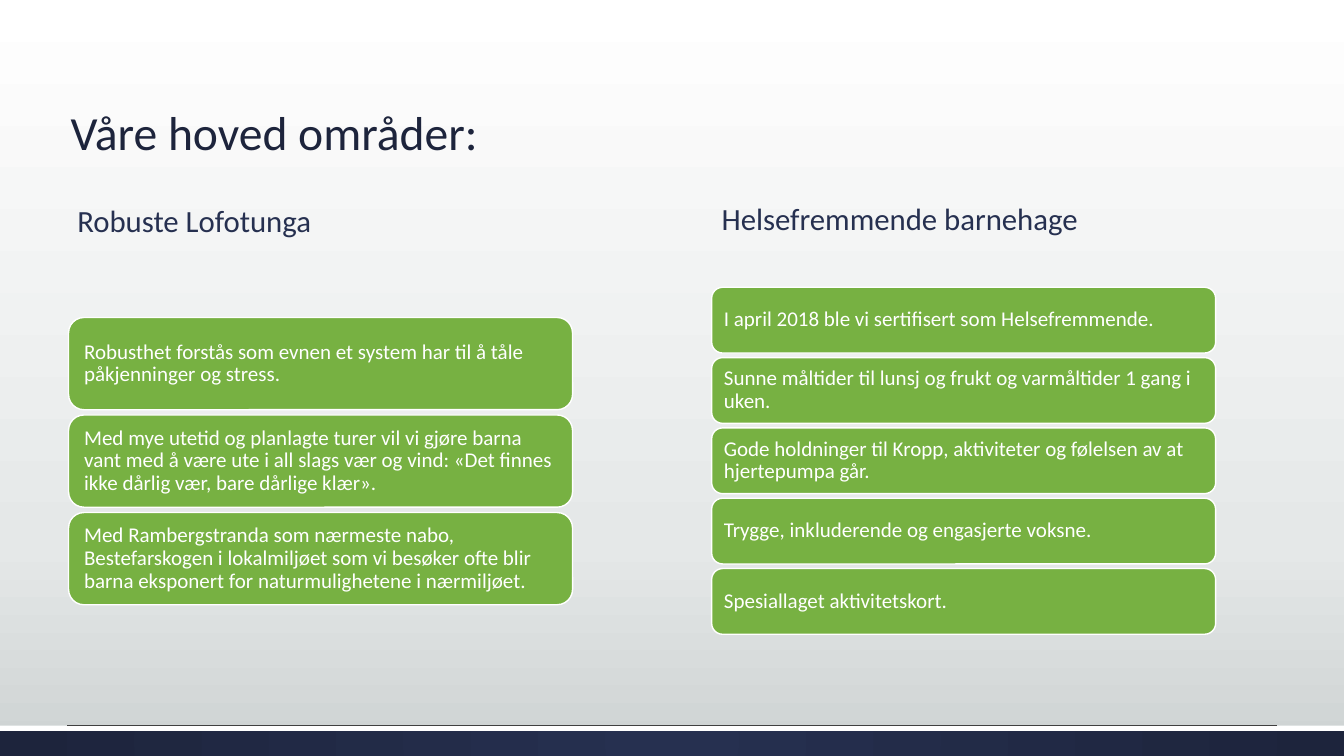
from dataclasses import dataclass

from lxml.etree import SubElement
from pptx import Presentation
from pptx.dml.color import RGBColor
from pptx.enum.shapes import MSO_CONNECTOR, MSO_SHAPE
from pptx.enum.text import MSO_ANCHOR, MSO_AUTO_SIZE, PP_ALIGN
from pptx.oxml.ns import qn
from pptx.util import Inches, Pt


@dataclass(frozen=True)
class Theme:
    font: str = "Calibri"
    title_size: int = 34
    heading_size: int = 22
    card_size: int = 15
    navy: str = "1D243C"
    blue: str = "263050"
    green: str = "77B142"
    white: str = "FFFFFF"
    rule: str = "404040"
    backdrop: tuple = ((0, "FFFFFF"), (72, "E5E8E8"), (100, "CDD2D2"))


class SlideBuilder:
    """Places elements by percent of the slide's width and height."""

    def __init__(self, prs, layout, theme):
        self.prs, self.theme = prs, theme
        self.s = prs.slides.add_slide(layout)

    def box(self, x, y, w, h):
        width, height = self.prs.slide_width, self.prs.slide_height
        return [int(share * full / 100) for share, full in
                ((x, width), (y, height), (w, width), (h, height))]

    def gradient(self, fill, owner, stops, circle=False):
        fill.gradient()
        grad = owner.xpath(".//a:gradFill")[0]
        for child in list(grad):
            grad.remove(child)
        stop_list = SubElement(grad, qn("a:gsLst"))
        for position, color in stops:
            stop = SubElement(stop_list, qn("a:gs"), pos=str(position * 1000))
            SubElement(stop, qn("a:srgbClr"), val=color)
        if circle:
            shade = SubElement(grad, qn("a:path"), path="circle")
            SubElement(shade, qn("a:fillToRect"), l="50000", t="50000",
                       r="50000", b="50000")
        else:
            SubElement(grad, qn("a:lin"), ang="5400000", scaled="0")

    def backdrop(self):
        self.gradient(self.s.background.fill, self.s.element, self.theme.backdrop)

    def text(self, sp, text, size, color, anchor):
        tf = sp.text_frame
        tf.text = text
        tf.word_wrap = True
        tf.auto_size = MSO_AUTO_SIZE.NONE
        tf.vertical_anchor = anchor
        p = tf.paragraphs[0]
        p.alignment = PP_ALIGN.LEFT
        p.line_spacing = 0.9
        p.space_before = Pt(0)
        p.font.name, p.font.size, p.font.bold = self.theme.font, Pt(size), False
        p.font.color.rgb = RGBColor.from_string(color)

    def placeholder(self, idx, text, box, size, color, anchor):
        sp = self.s.placeholders[idx]
        sp.left, sp.top, sp.width, sp.height = self.box(*box)
        self.text(sp, text, size, color, anchor)

    def shape(self, kind, box, color=None):
        sp = self.s.shapes.add_shape(kind, *self.box(*box))
        sp.shadow.inherit = False
        sp.line.fill.background()
        if color:
            sp.fill.solid()
            sp.fill.fore_color.rgb = RGBColor.from_string(color)
        return sp

    def cards(self, texts, x, y, w, h, pitch, inset):
        t = self.theme
        for row, text in enumerate(texts):
            sp = self.shape(MSO_SHAPE.ROUNDED_RECTANGLE,
                            (x, y + row * pitch, w, h), t.green)
            sp.line.color.rgb = RGBColor.from_string(t.white)
            sp.line.width = Pt(1)
            tf = sp.text_frame
            tf.margin_left = tf.margin_right = Inches(inset)
            tf.margin_top = tf.margin_bottom = Inches(inset)
            self.text(sp, text, t.card_size, t.white, MSO_ANCHOR.MIDDLE)

    def footer(self):
        t = self.theme
        band = self.shape(MSO_SHAPE.RECTANGLE, (0, 96, 100, 4))
        self.gradient(band.fill, band.element, ((0, t.blue), (100, t.navy)), circle=True)
        self.shape(MSO_SHAPE.RECTANGLE, (0, 96, 100, 0.67), t.white)
        x, y, w, _ = self.box(5, 95.93, 90, 0)
        rule = self.s.shapes.add_connector(MSO_CONNECTOR.STRAIGHT, x, y, x + w, y)
        rule.line.width = Pt(0.75)
        rule.line.color.rgb = RGBColor.from_string(t.rule)
        SubElement(rule.element.spPr, qn("a:effectLst"))

    def drop_empty_placeholders(self):
        for sp in list(self.s.placeholders):
            if not sp.text_frame.text:
                sp.element.getparent().remove(sp.element)


ROBUST = [
    "Robusthet forstås som evnen et system har til å tåle påkjenninger og stress.",
    "Med mye utetid og planlagte turer vil vi gjøre barna vant med å være ute i all "
    "slags vær og vind: «Det finnes ikke dårlig vær, bare dårlige klær».",
    "Med Rambergstranda som nærmeste nabo, Bestefarskogen i lokalmiljøet som vi "
    "besøker ofte blir barna eksponert for naturmulighetene i nærmiljøet.",
]
HEALTH = [
    "I april 2018 ble vi sertifisert som Helsefremmende.",
    "Sunne måltider til lunsj og frukt og varmåltider 1 gang i uken.",
    "Gode holdninger til Kropp, aktiviteter og følelsen av at hjertepumpa går.",
    "Trygge, inkluderende og engasjerte voksne.",
    "Spesiallaget aktivitetskort.",
]


def main():
    prs = Presentation()
    prs.slide_width, prs.slide_height = Inches(13.33), Inches(7.5)
    theme = Theme()
    comparison = prs.slide_layouts.get_by_name("Comparison")
    slide = SlideBuilder(prs, comparison, theme)

    # Background and footer band
    slide.backdrop()
    slide.footer()

    # Title and column headings
    slide.placeholder(0, "Våre hoved områder:", (4.5, 4.4, 90.5, 17.5),
                      theme.title_size, theme.navy, MSO_ANCHOR.BOTTOM)
    for idx, text, x, y in ((1, "Robuste Lofotunga", 5, 23.5),
                            (3, "Helsefremmende barnehage", 52.95, 23.2)):
        slide.placeholder(idx, text, (x, y, 37.5, 12),
                          theme.heading_size, theme.blue, MSO_ANCHOR.MIDDLE)
    slide.drop_empty_placeholders()

    # Card columns
    slide.cards(ROBUST, x=5.1, y=42, w=37.5, h=12.2, pitch=12.9, inset=0.11)
    slide.cards(HEALTH, x=52.95, y=38, w=37.5, h=8.7, pitch=9.3, inset=0.09)

    prs.save("out.pptx")


if __name__ == "__main__":
    main()
